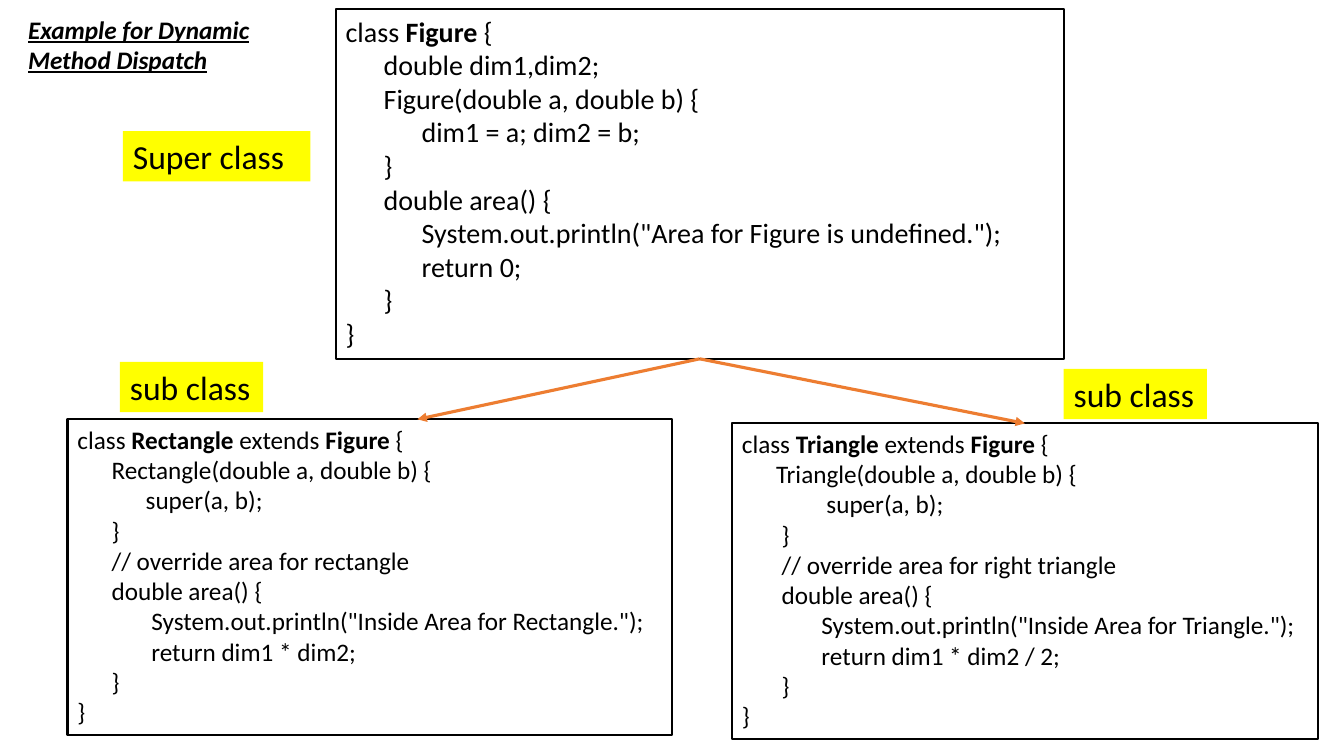
"""Builds a slide on dynamic method dispatch with a super class and two sub classes."""
from lxml.etree import SubElement
from pptx import Presentation
from pptx.dml.color import RGBColor
from pptx.enum.shapes import MSO_CONNECTOR
from pptx.enum.text import MSO_AUTO_SIZE
from pptx.oxml.ns import qn
from pptx.util import Inches, Pt

COLORS = {"ink": "000000", "label": "FFFF00", "arrow": "ED7D31"}

FIGURE = """class |Figure| {
      double dim1,dim2;
      Figure(double a, double b) {
            dim1 = a; dim2 = b;
      }
      double area() {
            System.out.println("Area for Figure is undefined.");
            return 0;
      }
}"""

RECTANGLE = """class |Rectangle| extends |Figure| {
      Rectangle(double a, double b) {
            super(a, b);
      }
      // override area for rectangle
      double area() {
             System.out.println("Inside Area for Rectangle.");
             return dim1 * dim2;
      }
}"""

TRIANGLE = """class |Triangle| extends |Figure| {
      Triangle(double a, double b) {
\t      super(a, b);
       }
       // override area for right triangle
       double area() {
              System.out.println("Inside Area for Triangle.");
              return dim1 * dim2 / 2;
       }
}"""


class Board:
    def __init__(self, slide, face="Calibri"):
        self.slide = slide
        self.face = face

    def color(self, name):
        return RGBColor.from_string(COLORS[name])

    def text(self, place, words, size, wrap=True):
        box = self.slide.shapes.add_textbox(*map(Inches, place))
        frame = box.text_frame
        frame.word_wrap = wrap
        frame.auto_size = MSO_AUTO_SIZE.SHAPE_TO_FIT_TEXT
        for i, line in enumerate(words.split("\n")):
            para = frame.add_paragraph() if i else frame.paragraphs[0]
            for j, part in enumerate(line.split("|")):
                run = para.add_run()
                run.text = part
                if j % 2:
                    run.font.bold = True
            font = para.font
            font.name, font.size = self.face, Pt(size)
            font.color.rgb = self.color("ink")
        return box

    def title(self, place, words):
        box = self.text(place, words, 18, wrap=False)
        for para in box.text_frame.paragraphs:
            font = para.font
            font.bold = font.italic = font.underline = True

    def code(self, place, words, size):
        box = self.text(place, words, size)
        box.line.color.rgb = self.color("ink")
        box.line.width = Pt(1.5)
        return box

    def label(self, place, words):
        box = self.text(place, words, 24)
        box.fill.solid()
        box.fill.fore_color.rgb = self.color("label")

    def arrow(self, start, end):
        line = self.slide.shapes.add_connector(
            MSO_CONNECTOR.STRAIGHT, *map(Inches, start + end))
        line.line.color.rgb = self.color("arrow")
        line.line.width = Pt(2.25)
        SubElement(line.line._get_or_add_ln(), qn("a:tailEnd"), type="triangle")
        SubElement(line._element.spPr, qn("a:effectLst"))
        return line


def main():
    deck = Presentation()
    deck.slide_width, deck.slide_height = Inches(13.33), Inches(7.5)
    board = Board(deck.slides.add_slide(deck.slide_layouts[6]))

    figure = board.code((3.33, 0.09, 7.22, 3.47), FIGURE, 20)
    board.code((0.67, 4.16, 6, 3.13), RECTANGLE, 18)
    triangle = board.code((7.26, 4.2, 5.81, 3.13), TRIANGLE, 18)

    start = (6.94, 3.56)
    left = board.arrow(start, (4.14, 4.16))
    right = board.arrow(start, (10.17, 4.2))
    for line in (left, right):
        line.begin_connect(figure, 2)
    right.end_connect(triangle, 0)

    board.label((1.22, 1.3, 1.86, 0.5), "Super class")
    for x, y in ((1.19, 3.59), (10.55, 3.66)):
        board.label((x, y, 1.42, 0.5), "sub class")
    board.title((0.18, 0.09, 2.47, 0.71), "Example for Dynamic\nMethod Dispatch")

    deck.save("out.pptx")


if __name__ == "__main__":
    main()
